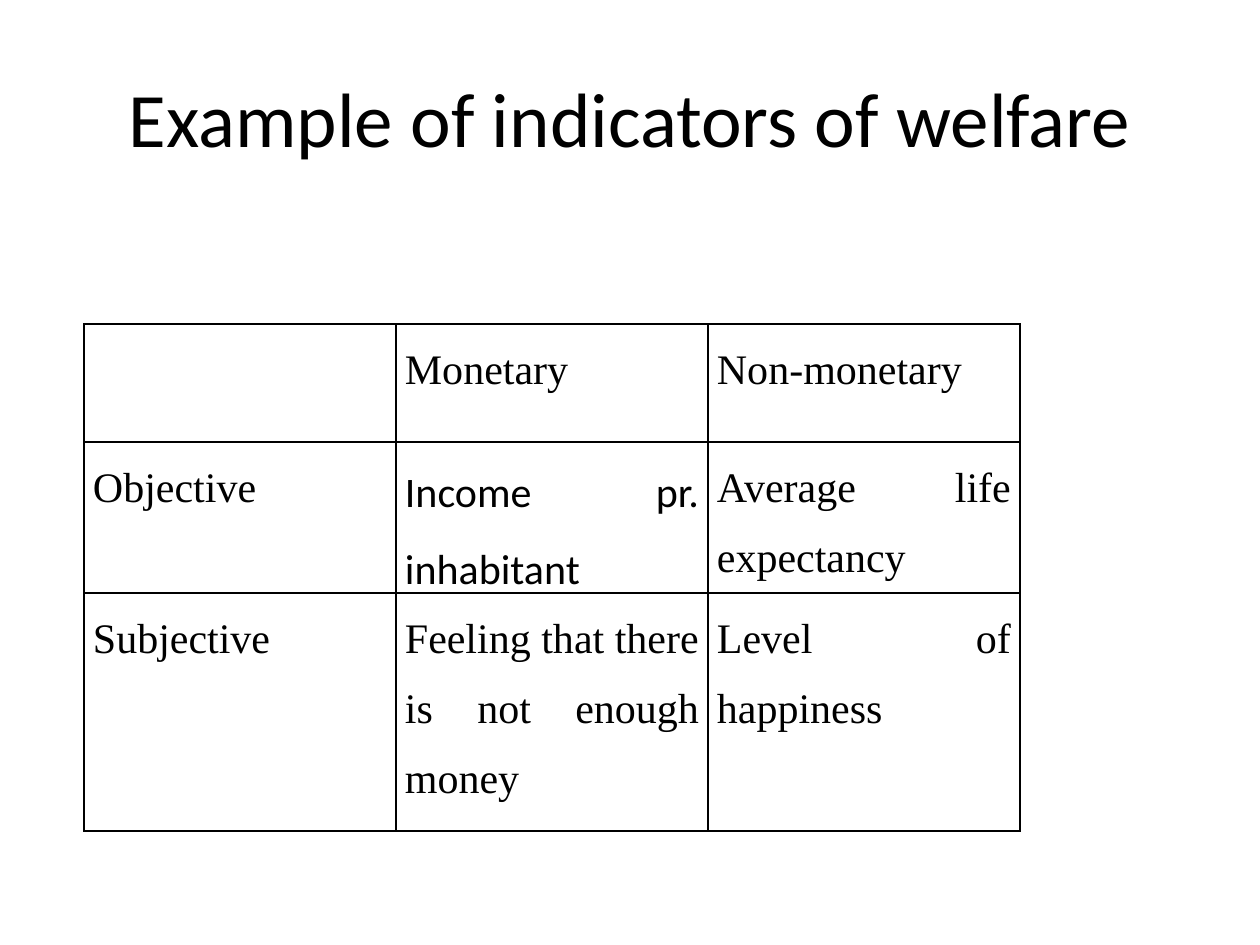
"""Build a slide with a table of welfare indicators."""
from lxml.etree import SubElement
from pptx import Presentation
from pptx.dml.color import RGBColor
from pptx.enum.text import MSO_ANCHOR, PP_ALIGN
from pptx.oxml.ns import qn
from pptx.util import Pt

PX = 914400 // 126
INK = {"text": "000000", "line": "000000"}
SANS, SERIF = "Calibri", "Times New Roman"
TITLE = "Example of indicators of welfare"
ROWS = [
    ["", "Monetary", "Non-monetary"],
    ["Objective", "Income pr. inhabitant", "Average life expectancy"],
    ["Subjective", "Feeling that there is not enough money", "Level of happiness"],
]
FONTS = {"Income pr. inhabitant": SANS}
LEFT, TOP, WIDE = 84, 324, 312
TALL = [118, 118, 238]
PAD = 9


def write(para, text, size, font, align):
    para.alignment = align
    run = para.add_run()
    run.text = text
    run.font.size = Pt(size)
    run.font.name = font
    run.font.color.rgb = RGBColor.from_string(INK["text"])


def edge(cell):
    props = cell._tc.get_or_add_tcPr()
    for spot, side in enumerate(("a:lnL", "a:lnR", "a:lnT", "a:lnB")):
        line = props.makeelement(qn(side), {"w": str(Pt(1))})
        fill = SubElement(line, qn("a:solidFill"))
        SubElement(fill, qn("a:srgbClr"), val=INK["line"])
        props.insert(spot, line)


def add_title(slide):
    box = slide.shapes.add_textbox(63 * PX, 38 * PX, 1134 * PX, 157 * PX)
    frame = box.text_frame
    frame.word_wrap = True
    frame.vertical_anchor = MSO_ANCHOR.MIDDLE
    write(frame.paragraphs[0], TITLE, 44, SANS, PP_ALIGN.CENTER)


def add_grid(slide):
    count = len(ROWS[0])
    table = slide.shapes.add_table(
        len(ROWS), count, LEFT * PX, TOP * PX, count * WIDE * PX, sum(TALL) * PX
    ).table
    table.first_row = table.horz_banding = False
    for col in table.columns:
        col.width = WIDE * PX
    for row, tall, texts in zip(table.rows, TALL, ROWS):
        row.height = tall * PX
        for cell, text in zip(row.cells, texts):
            cell.fill.background()
            cell.margin_left = cell.margin_right = PAD * PX
            cell.margin_top = cell.margin_bottom = 0
            edge(cell)
            if text:
                para = cell.text_frame.paragraphs[0]
                para.line_spacing = 1.5
                write(para, text, 24, FONTS.get(text, SERIF), PP_ALIGN.JUSTIFY)


def main():
    deck = Presentation()
    deck.slide_width, deck.slide_height = 1260 * PX, 945 * PX
    slide = deck.slides.add_slide(deck.slide_layouts[6])
    add_title(slide)
    add_grid(slide)
    deck.save("out.pptx")


if __name__ == "__main__":
    main()
